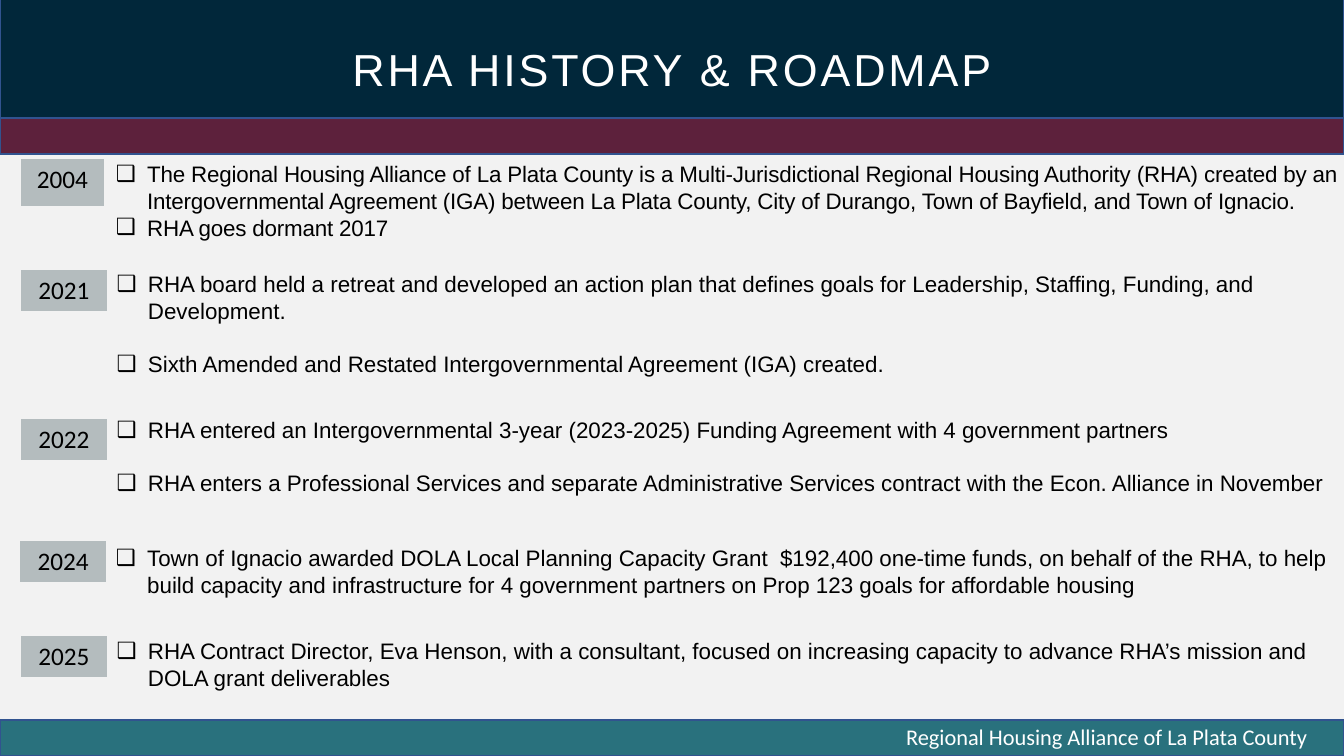
from lxml.etree import SubElement
from pptx import Presentation
from pptx.dml.color import RGBColor
from pptx.enum.shapes import MSO_SHAPE
from pptx.enum.text import MSO_ANCHOR, MSO_AUTO_SIZE, PP_ALIGN
from pptx.oxml.ns import qn
from pptx.util import Cm, Pt

SLIDE_WIDTH = 33.87
NO_TABLE_STYLE = "{2D5ABB26-0587-4C30-8999-92F81FD0307C}"


def color(value):
    return RGBColor.from_string(value)


def add_span(para, text, size, font, fill, spacing=0):
    """Add a run; spacing is the letter spacing in hundredths of a point."""
    span = para.add_run()
    span.text = text
    span.font.size = Pt(size)
    span.font.name = font
    span.font.color.rgb = color(fill)
    if spacing:
        span._r.get_or_add_rPr().set("spc", str(spacing))


deck = Presentation()
deck.slide_width = Cm(SLIDE_WIDTH)
deck.slide_height = Cm(19.05)
page = deck.slides.add_slide(deck.slide_layouts[5])
page.background.fill.solid()
page.background.fill.fore_color.rgb = color("F2F2F2")

# Full-width bands: top, height, fill
for top, height, fill in [
    (-0.1, 3.12, "01273A"),
    (2.97, 0.91, "5D213C"),
    (18.14, 0.91, "29717D"),
]:
    band = page.shapes.add_shape(
        MSO_SHAPE.RECTANGLE, 0, Cm(top), Cm(SLIDE_WIDTH), Cm(height))
    band.shadow.inherit = False
    band.fill.solid()
    band.fill.fore_color.rgb = color(fill)
    band.line.color.rgb = color("31538F")
    band.line.width = Pt(1)

# Title, brought in front of the bands
title = page.shapes.title
page.shapes._spTree.append(title._element)
title.left, title.top = Cm(6.02), Cm(0.53)
title.width, title.height = Cm(21.84), Cm(2.03)
title.text_frame.auto_size = MSO_AUTO_SIZE.NONE
title.text_frame.vertical_anchor = MSO_ANCHOR.BOTTOM
para = title.text_frame.paragraphs[0]
para.alignment = PP_ALIGN.CENTER
para.line_spacing = 0.9
add_span(para, "RHA HISTORY & ROADMAP", 32, "Arial", "FFFFFF", 200)

# Footer
footer = page.shapes.add_textbox(Cm(21.51), Cm(18.11), Cm(11.84), Cm(0.94))
footer.text_frame.word_wrap = True
footer.text_frame.margin_right = Cm(0.4)
para = footer.text_frame.paragraphs[0]
para.alignment = PP_ALIGN.RIGHT
add_span(para, "Regional Housing Alliance of La Plata County", 16, "Calibri", "FFFFFF")

# Year, tag (left, top, width, height), text (left, top, width, height),
# letter spacing, space between bullets in points, bullets
milestones = [
    ("2004", (0.53, 4.01, 2.08, 1.17), (2.67, 3.91, 32.11, 2.31), -10, 0, [
        "The Regional Housing Alliance of La Plata County is a "
        "Multi-Jurisdictional Regional Housing Authority (RHA) created by an "
        "Intergovernmental Agreement (IGA) between La Plata County, City of "
        "Durango, Town of Bayfield, and Town of Ignacio.",
        "RHA goes dormant 2017",
    ]),
    ("2021", (0.53, 6.81, 2.16, 1.02), (2.69, 6.68, 31.17, 3), 0, 19, [
        "RHA board held a retreat and developed an action plan that defines "
        "goals for Leadership, Staffing, Funding, and Development.",
        "Sixth Amended and Restated Intergovernmental Agreement (IGA) created.",
    ]),
    ("2022", (0.53, 10.57, 2.16, 1.02), (2.69, 10.36, 31.17, 3), 0, 19, [
        "RHA entered an Intergovernmental 3-year (2023-2025) Funding Agreement "
        "with 4 government partners",
        "RHA enters a Professional Services and separate Administrative "
        "Services contract with the Econ. Alliance in November",
    ]),
    ("2024", (0.51, 13.64, 2.16, 1.02), (2.67, 13.59, 31.17, 1.63), 0, 0, [
        "Town of Ignacio awarded DOLA Local Planning Capacity Grant  $192,400 "
        "one-time funds, on behalf of the RHA, to help build capacity and "
        "infrastructure for 4 government partners on Prop 123 goals for "
        "affordable housing",
    ]),
    ("2025", (0.53, 16.03, 2.16, 1.02), (2.69, 15.93, 31.17, 1.63), 0, 0, [
        "RHA Contract Director, Eva Henson, with a consultant, focused on "
        "increasing capacity to advance RHA’s mission and DOLA grant "
        "deliverables",
    ]),
]

for year, tag_place, text_place, spacing, gap, bullets in milestones:
    tag = page.shapes.add_table(1, 1, *map(Cm, tag_place)).table
    tag.first_row = tag.horz_banding = False
    tag._tbl.tblPr.find(qn("a:tableStyleId")).text = NO_TABLE_STYLE
    cell = tag.cell(0, 0)
    cell.fill.solid()
    cell.fill.fore_color.rgb = color("B4BCBE")
    para = cell.text_frame.paragraphs[0]
    para.alignment = PP_ALIGN.CENTER
    add_span(para, year, 18, "Calibri", "000000")

    box = page.shapes.add_textbox(*map(Cm, text_place))
    frame = box.text_frame
    frame.word_wrap = True
    for index, bullet in enumerate(bullets):
        para = frame.add_paragraph() if index else frame.paragraphs[0]
        properties = para._p.get_or_add_pPr()
        properties.set("marL", str(Cm(0.79)))
        properties.set("indent", str(-Cm(0.79)))
        SubElement(properties, qn("a:buFont")).set("typeface", "Arial")
        SubElement(properties, qn("a:buChar")).set("char", "❑")
        if index and gap:
            para.space_before = Pt(gap)
        add_span(para, bullet, 16, "Arial", "000000", spacing)

deck.save("out.pptx")
